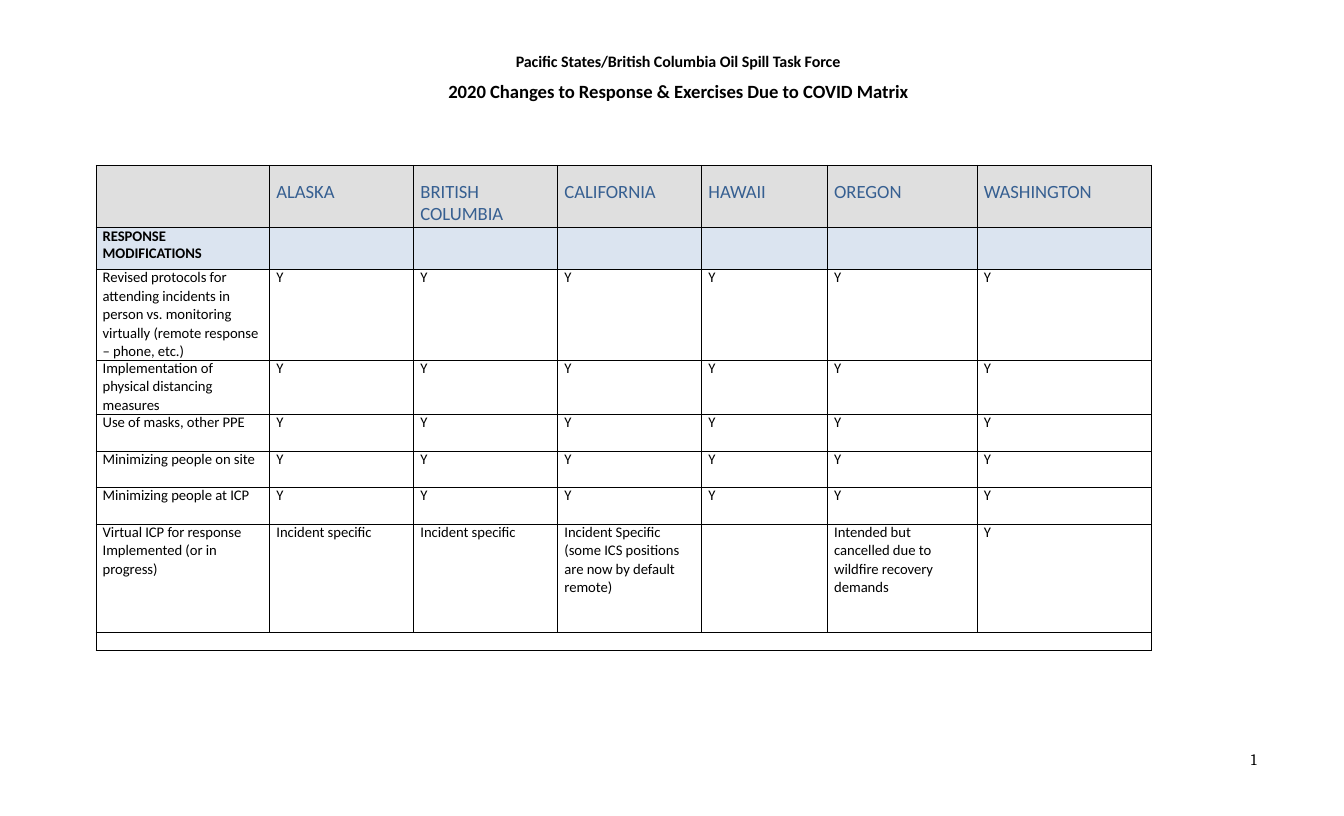
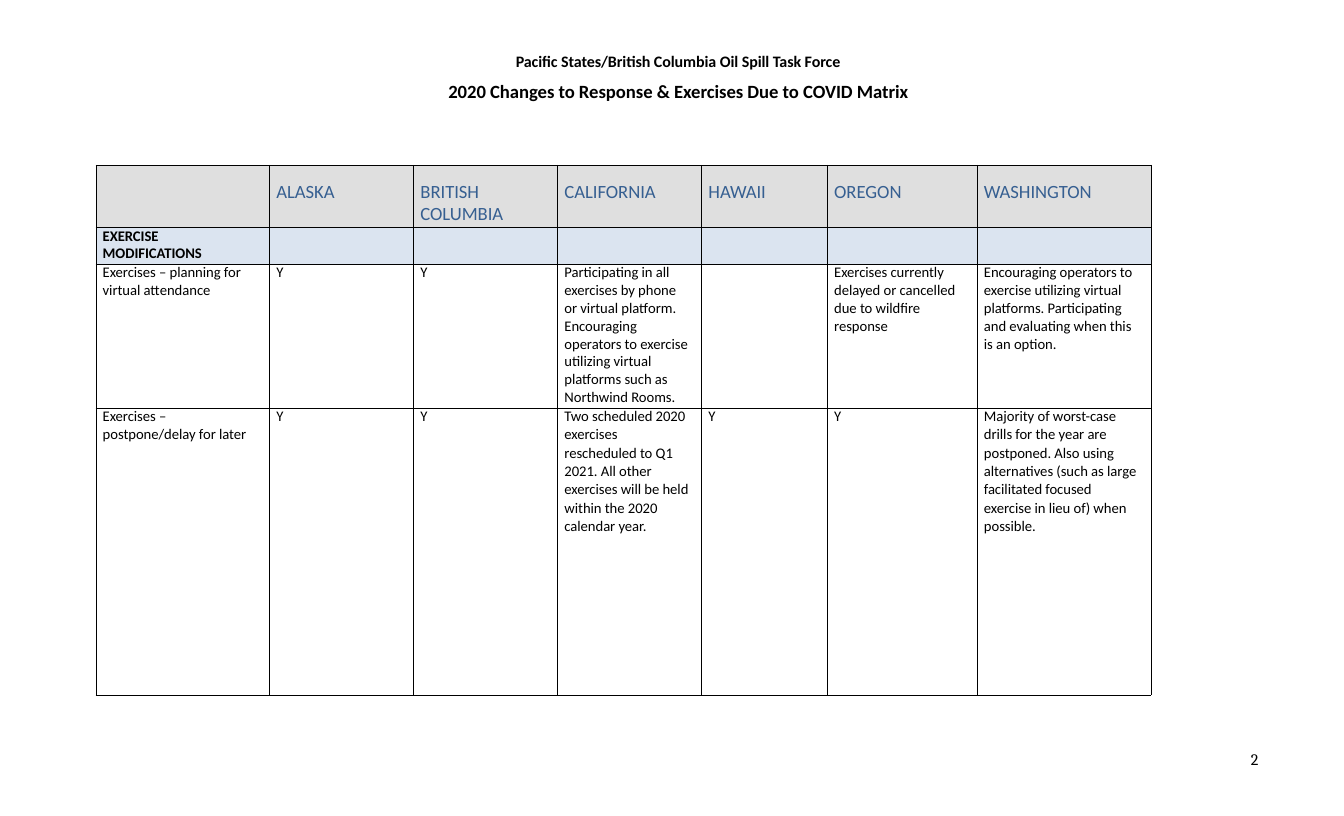
from lxml import etree
from pptx import Presentation
from pptx.dml.color import RGBColor
from pptx.enum import text
from pptx.oxml import ns
from pptx.util import Inches, Pt

COLORS = {"ink": "000000", "heading": "365F91", "header": "DFDFDF", "section": "DBE4F0"}
REGIONS = ["", "ALASKA", "BRITISH\vCOLUMBIA", "CALIFORNIA", "HAWAII", "OREGON", "WASHINGTON"]
COLUMN_WIDTHS = [1.81, 1.5, 1.5, 1.5, 1.31, 1.56, 1.81]
HEADER_HEIGHT = 0.65
TITLES = [("Pacific States/British Columbia Oil Spill Task Force", 12),
          ("2020 Changes to Response & Exercises Due to COVID Matrix", 14)]
ALL_YES = ["Y"] * 6

RESPONSE = {
    "section": "RESPONSE\vMODIFICATIONS",
    "section_height": 0.44,
    "closing_height": 0.19,
    "rows": [
        (0.94, 12.9, 1.02, [
            "Revised protocols for\nattending incidents in\vperson vs. monitoring\v"
            "virtually (remote response\n– phone, etc.)"] + ALL_YES),
        (0.57, 12.9, 1.02, ["Implementation of\nphysical distancing\vmeasures"] + ALL_YES),
        (0.38, 12.9, 1.02, ["Use of masks, other PPE"] + ALL_YES),
        (0.38, 13, 1.02, ["Minimizing people on site"] + ALL_YES),
        (0.38, 13, 1.02, ["Minimizing people at ICP"] + ALL_YES),
        (1.13, 12.9, 1.02, [
            "Virtual ICP for response\nImplemented (or in\vprogress)",
            "Incident specific",
            "Incident specific",
            "Incident Specific\n(some ICS positions\vare now by default\vremote)",
            "",
            "Intended but\ncancelled due to\vwildfire recovery\vdemands",
            "Y"]),
    ],
}

EXERCISES = {
    "section": "EXERCISE\vMODIFICATIONS",
    "section_height": 0.38,
    "closing_height": None,
    "rows": [
        (1.5, 13.3, Pt(13.4), [
            "Exercises – planning for\vvirtual attendance",
            "Y",
            "Y",
            "Participating in all\vexercises by phone\nor virtual platform.\vEncouraging\v"
            "operators to exercise\vutilizing virtual\vplatforms such as\nNorthwind Rooms.",
            "",
            "Exercises currently\vdelayed or cancelled\ndue to wildfire\vresponse",
            "Encouraging operators to\vexercise utilizing virtual\n"
            "platforms. Participating\vand evaluating when this\vis an option."]),
        (2.99, 12.9, 1.02, [
            "Exercises –\npostpone/delay for later",
            "Y",
            "Y",
            "Two scheduled 2020\nexercises\vrescheduled to Q1\v2021. All other\v"
            "exercises will be held\vwithin the 2020\vcalendar year.",
            "Y",
            "Y",
            "Majority of worst-case\ndrills for the year are\vpostponed. Also using\v"
            "alternatives (such as large\vfacilitated focused\v"
            "exercise in lieu of) when\vpossible."]),
    ],
}


class MatrixDeck:
    def __init__(self):
        self.deck = Presentation()
        self.deck.slide_width = Inches(14)
        self.deck.slide_height = Inches(8.5)
        self.slide = None

    def add_slide(self):
        self.slide = self.deck.slides.add_slide(self.deck.slide_layouts[6])

    def style(self, paragraph, size, font="Calibri", color="ink", bold=False, tracking="-5"):
        for run in paragraph.runs:
            run.font.size = Pt(size)
            run.font.name = font
            run.font.bold = bold
            run.font.color.rgb = RGBColor.from_string(COLORS[color])
            run.font._element.set("spc", tracking)
        for line_break in paragraph._p.findall(ns.qn("a:br")):
            etree.SubElement(line_break, ns.qn("a:rPr"), sz=str(size * 100))
        if not paragraph.runs:
            etree.SubElement(paragraph._p, ns.qn("a:endParaRPr"), sz=str(size * 100))

    def text_box(self, left, top, width, height, margin_left, margin_top):
        box = self.slide.shapes.add_textbox(
            Inches(left), Inches(top), Inches(width), Inches(height))
        frame = box.text_frame
        frame.word_wrap = True
        frame.margin_left, frame.margin_top = Inches(margin_left), Inches(margin_top)
        frame.margin_right = frame.margin_bottom = 0
        return frame

    def title(self):
        frame = self.text_box(4.63, 0.45, 4.87, 0.62, 0, 0.09)
        frame.text = "\n".join(line for line, _ in TITLES)
        for paragraph, (_, size) in zip(frame.paragraphs, TITLES):
            paragraph.alignment = text.PP_ALIGN.CENTER
            paragraph.space_before = Pt(6.2)
            self.style(paragraph, size, bold=True)

    def page_number(self, number):
        frame = self.text_box(12.99, 7.8, 0.18, 0.22, 0.04, 0.01)
        frame.text = str(number)
        self.style(frame.paragraphs[0], 12, font="Cambria", tracking="0")

    def border(self, cell):
        properties = cell._tc.get_or_add_tcPr()
        for side in ("lnL", "lnR", "lnT", "lnB"):
            line = etree.SubElement(properties, ns.qn("a:" + side), w=str(Pt(0.5)))
            fill = etree.SubElement(line, ns.qn("a:solidFill"))
            etree.SubElement(fill, ns.qn("a:srgbClr"), val=COLORS["ink"])

    def cell(self, cell, content, fill=None, margin_top=0, first=None, later=None,
             size=11, color="ink", bold=False):
        cell.margin_left, cell.margin_top = Inches(0.07), Inches(margin_top)
        cell.margin_right = cell.margin_bottom = 0
        self.border(cell)
        if fill:
            cell.fill.solid()
            cell.fill.fore_color.rgb = RGBColor.from_string(COLORS[fill])
        else:
            cell.fill.background()
        cell.text_frame.text = content
        for index, paragraph in enumerate(cell.text_frame.paragraphs):
            spacing = later if index else first
            if spacing:
                paragraph.line_spacing = spacing
            self.style(paragraph, size, color=color, bold=bold)

    def matrix(self, section, section_height, closing_height, rows):
        heights = [HEADER_HEIGHT, section_height] + [row[0] for row in rows]
        if closing_height:
            heights.append(closing_height)
        table = self.slide.shapes.add_table(
            len(heights), len(REGIONS), Inches(1), Inches(1.72),
            Inches(sum(COLUMN_WIDTHS)), Inches(sum(heights))).table
        table.first_row = table.horz_banding = False
        for column, width in zip(table.columns, COLUMN_WIDTHS):
            column.width = Inches(width)
        for row, height in zip(table.rows, heights):
            row.height = Inches(height)
        for column, region in enumerate(REGIONS):
            self.cell(table.cell(0, column), region, "header", 0.16,
                      size=14, color="heading")
            self.cell(table.cell(1, column), "" if column else section, "section",
                      first=Pt(13.3), bold=True)
        for index, (_, first, later, answers) in enumerate(rows, 2):
            for column, answer in enumerate(answers):
                self.cell(table.cell(index, column), answer, first=Pt(first), later=later)
        if closing_height:
            closing = len(heights) - 1
            for column in range(len(REGIONS)):
                self.cell(table.cell(closing, column), "", size=10)
            table.cell(closing, 0).merge(table.cell(closing, len(REGIONS) - 1))


def main():
    matrix_deck = MatrixDeck()
    for number, topic in enumerate((RESPONSE, EXERCISES), 1):
        matrix_deck.add_slide()
        matrix_deck.page_number(number)
        matrix_deck.title()
        matrix_deck.matrix(**topic)
    matrix_deck.deck.save("out.pptx")


if __name__ == "__main__":
    main()
